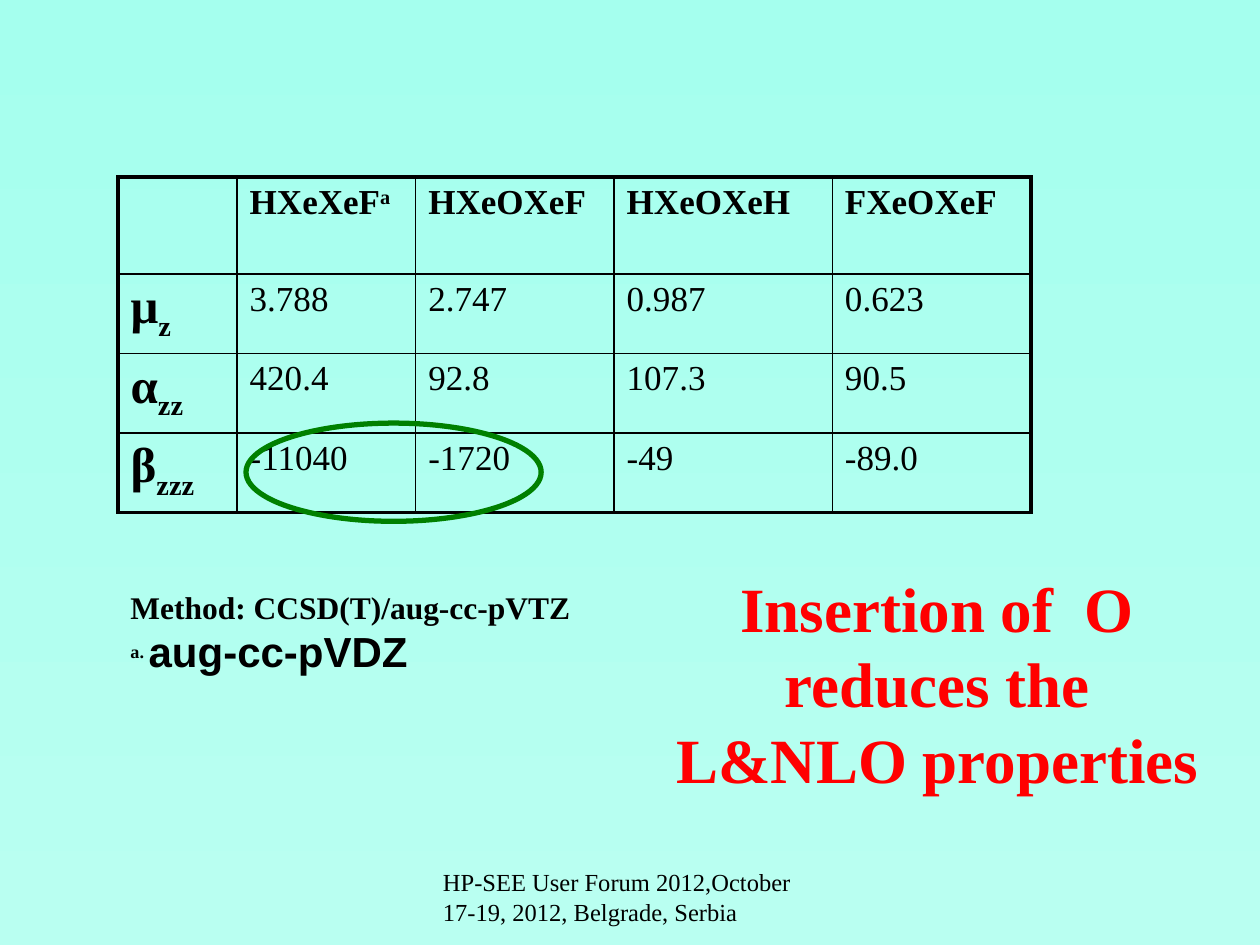
from lxml.etree import SubElement
from pptx import Presentation
from pptx.dml.color import RGBColor
from pptx.enum.shapes import MSO_SHAPE
from pptx.enum.text import PP_ALIGN
from pptx.oxml.ns import qn
from pptx.util import Cm, Pt

BLACK = RGBColor(0, 0, 0)
RED = RGBColor(255, 0, 0)
GREEN = RGBColor(0, 128, 0)
SKY_TOP = RGBColor(0xA5, 0xFF, 0xEE)
SKY_BOTTOM = RGBColor(0xB9, 0xFF, 0xF1)
SERIF = "Times New Roman"

COLUMN_WIDTHS = [2.4, 3.6, 4, 4.4, 4]
ROW_HEIGHTS = [1.95, 1.6, 1.6, 1.6]
MOLECULES = [("HXeXeF", "a"), ("HXeOXeF", ""), ("HXeOXeH", ""), ("FXeOXeF", "")]
PROPERTIES = [
    ("μ", "z", ["3.788", "2.747", "0.987", "0.623"]),
    ("α", "zz", ["420.4", "92.8", "107.3", "90.5"]),
    ("β", "zzz", ["-11040", "-1720", "-49", "-89.0"]),
]


def add_span(para, text, size, bold=False, color=BLACK, font=SERIF, baseline=0):
    span = para.add_run()
    span.text = text
    span.font.size = Pt(size)
    span.font.bold = bold
    span.font.name = font
    span.font.color.rgb = color
    if baseline:
        span.font._element.set("baseline", str(baseline * 1000))


def add_text_frame(page, box):
    frame = page.shapes.add_textbox(*map(Cm, box)).text_frame
    frame.word_wrap = True
    return frame


def paint_background(page):
    fill = page.background.fill
    fill.gradient()
    fill.gradient_angle = 270
    for stop, color in zip(fill.gradient_stops, (SKY_TOP, SKY_BOTTOM)):
        stop.color.rgb = color


def set_cell_borders(cell, widths):
    properties = cell._tc.get_or_add_tcPr()
    for side, width in zip("LRTB", widths):
        line = SubElement(properties, qn(f"a:ln{side}"), w=str(Pt(width)))
        fill = SubElement(line, qn("a:solidFill"))
        SubElement(fill, qn("a:srgbClr"), val=str(BLACK))


def fill_cell(cell, text, script, size, bold, baseline):
    para = cell.text_frame.paragraphs[0]
    para.space_before = Pt(size * 0.2)
    add_span(para, text, size, bold)
    if script:
        add_span(para, script, size, bold, baseline=baseline)


def add_property_table(page, box):
    rows, columns = len(ROW_HEIGHTS), len(COLUMN_WIDTHS)
    table = page.shapes.add_table(rows, columns, *map(Cm, box)).table
    table.first_row = table.horz_banding = False
    for column, width in zip(table.columns, COLUMN_WIDTHS):
        column.width = Cm(width)
    for row, height in zip(table.rows, ROW_HEIGHTS):
        row.height = Cm(height)

    for column, (name, mark) in enumerate(MOLECULES, 1):
        fill_cell(table.cell(0, column), name, mark, 20, True, 30)
    for row, (symbol, index, values) in enumerate(PROPERTIES, 1):
        fill_cell(table.cell(row, 0), symbol, index, 28, True, -25)
        for column, value in enumerate(values, 1):
            fill_cell(table.cell(row, column), value, "", 20, False, 0)

    for row in range(rows):
        for column in range(columns):
            cell = table.cell(row, column)
            outer = (column == 0, column == columns - 1, row == 0, row == rows - 1)
            set_cell_borders(cell, [2.25 if edge else 1 for edge in outer])
            cell.fill.background()


def add_highlight(page, box):
    ellipse = page.shapes.add_shape(MSO_SHAPE.OVAL, *map(Cm, box))
    ellipse.shadow.inherit = False
    ellipse.fill.background()
    ellipse.line.color.rgb = GREEN
    ellipse.line.width = Pt(3)


def add_method(page, box):
    frame = add_text_frame(page, box)
    add_span(frame.paragraphs[0], "Method: CCSD(T)/aug-cc-pVTZ", 18, True)
    para = frame.add_paragraph()
    add_span(para, "a. ", 18, True, baseline=30)
    add_span(para, "aug-cc-pVDZ", 24, True, font="Arial")


def add_conclusion(page, box):
    para = add_text_frame(page, box).paragraphs[0]
    para.alignment = PP_ALIGN.CENTER
    add_span(para, "Insertion of  O reduces the L&NLO properties", 36, True, RED)


def add_footer(page, box):
    para = add_text_frame(page, box).paragraphs[0]
    add_span(para, "HP-SEE User Forum 2012,October 17-19, 2012, Belgrade, Serbia", 14)


def main():
    deck = Presentation()
    deck.slide_width, deck.slide_height = Cm(25.4), Cm(19.05)
    page = deck.slides.add_slide(deck.slide_layouts[6])
    paint_background(page)
    add_footer(page, (8.68, 17.36, 8.05, 1.27))
    add_property_table(page, (2.38, 3.57, sum(COLUMN_WIDTHS), sum(ROW_HEIGHTS)))
    add_method(page, (2.38, 11.73, 10.6, 2.82))
    add_conclusion(page, (13.18, 11.35, 11.43, 4.88))
    add_highlight(page, (4.96, 8.53, 5.95, 1.98))
    deck.save("out.pptx")


if __name__ == "__main__":
    main()
